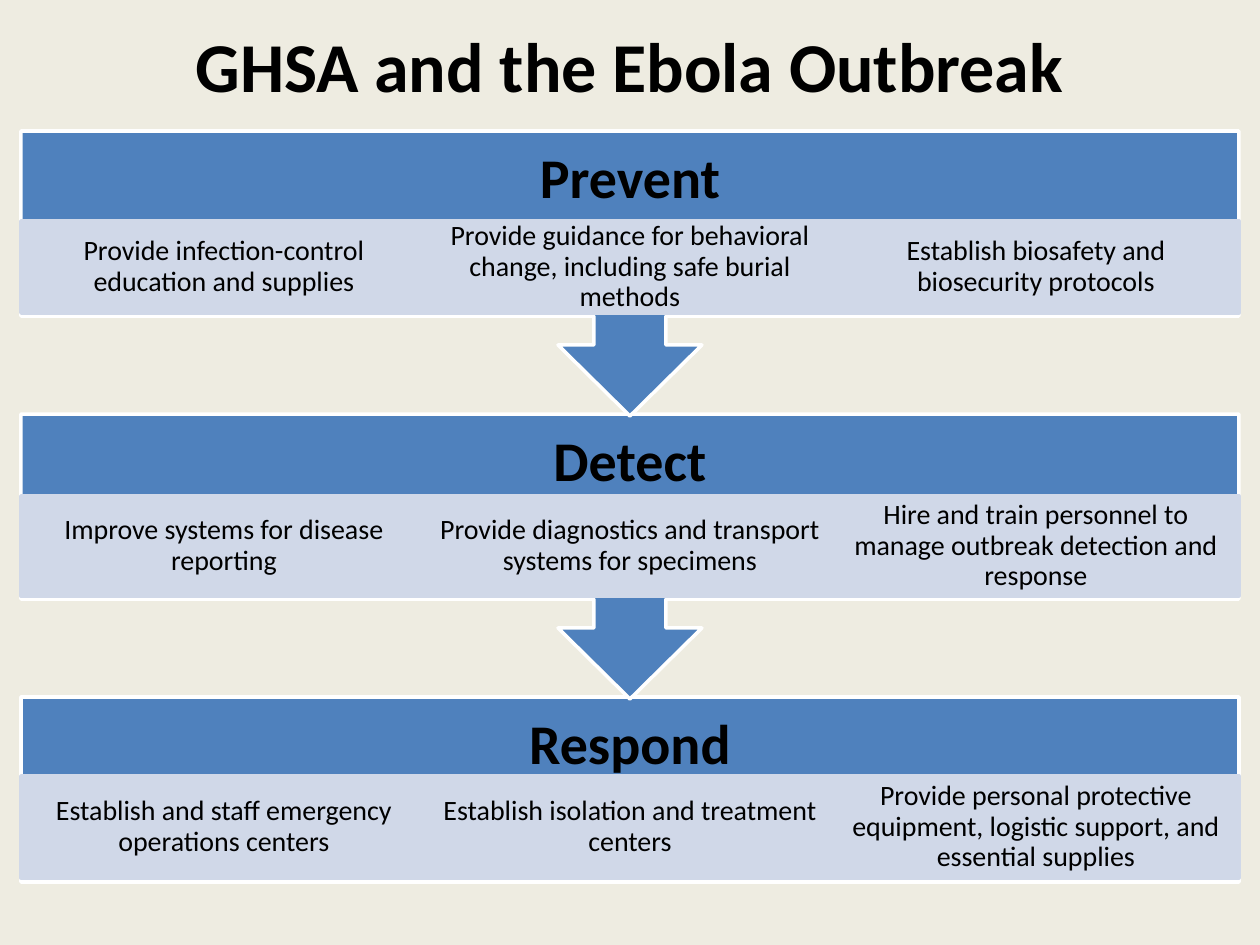
from pptx import Presentation
from pptx.dml.color import RGBColor
from pptx.enum.shapes import MSO_SHAPE
from pptx.enum.text import MSO_ANCHOR, PP_ALIGN
from pptx.util import Pt

RECTANGLE = MSO_SHAPE.RECTANGLE
MIDDLE = MSO_ANCHOR.MIDDLE
CENTER = PP_ALIGN.CENTER

PX = 914400 / 126
COLORS = {
    "background": "EEECE1",
    "stage": "4F81BD",
    "action": "D0D8E8",
    "outline": "FFFFFF",
    "text": "000000",
}

LEFT, WIDTH = 21, 1218
RIGHT = LEFT + WIDTH
MIDDLE_X = LEFT + WIDTH // 2
FIRST_TOP, STAGE_PITCH, STAGE_HEIGHT = 131, 283, 185
NECK_HALF, HEAD_HALF, NECK_LENGTH, ARROW_LENGTH = 36, 72, 29, 100
COLUMN = WIDTH // 3

# name, offset of the action row, height of the action row, actions
STAGES = [
    ("Prevent", 90, 92, [
        "Provide infection-control education and supplies",
        "Provide guidance for behavioral change, including safe burial methods",
        "Establish biosafety and biosecurity protocols"]),
    ("Detect", 82, 100, [
        "Improve systems for disease reporting",
        "Provide diagnostics and transport systems for specimens",
        "Hire and train personnel to manage outbreak detection and response"]),
    ("Respond", 79, 102, [
        "Establish and staff emergency operations centers",
        "Establish isolation and treatment centers",
        "Provide personal protective equipment, logistic support, and essential supplies"]),
]


def px(*lengths):
    return [round(length * PX) for length in lengths]


def write_text(shape, text, size, insets, bold=False):
    """Fill the shape with one paragraph; insets are left, top, right, bottom."""
    frame = shape.text_frame
    frame.word_wrap = True
    frame.vertical_anchor = MIDDLE
    (frame.margin_left, frame.margin_top,
     frame.margin_right, frame.margin_bottom) = px(*insets)
    frame.text = text
    paragraph = frame.paragraphs[0]
    paragraph.alignment = CENTER
    paragraph.line_spacing = 0.9
    paragraph.font.name = "Calibri"
    paragraph.font.size = Pt(size)
    paragraph.font.bold = bold
    paragraph.font.color.rgb = RGBColor.from_string(COLORS["text"])


presentation = Presentation()
presentation.slide_width, presentation.slide_height = px(1260, 945)
slide = presentation.slides.add_slide(presentation.slide_layouts[5])
slide.background.fill.solid()
slide.background.fill.fore_color.rgb = RGBColor.from_string(COLORS["background"])

title = slide.shapes.title
title.left, title.top, title.width, title.height = px(52, 0, 1155, 139)
write_text(title, "GHSA and the Ebola Outbreak", 40, (13, 6, 13, 6), bold=True)

# The lowest stage comes first so that each arrow tip lies over the next stage
for index, (name, row_offset, row_height, actions) in reversed(list(enumerate(STAGES))):
    top = FIRST_TOP + index * STAGE_PITCH
    bottom = top + STAGE_HEIGHT
    outline = [(LEFT, bottom), (LEFT, top), (RIGHT, top)]
    bottom_inset = 110
    if index < len(STAGES) - 1:
        shoulder = bottom + NECK_LENGTH
        outline = [
            (MIDDLE_X + NECK_HALF, bottom),
            (MIDDLE_X + NECK_HALF, shoulder),
            (MIDDLE_X + HEAD_HALF, shoulder),
            (MIDDLE_X, bottom + ARROW_LENGTH),
            (MIDDLE_X - HEAD_HALF, shoulder),
            (MIDDLE_X - NECK_HALF, shoulder),
            (MIDDLE_X - NECK_HALF, bottom),
        ] + outline
        bottom_inset = 210

    builder = slide.shapes.build_freeform(RIGHT, bottom, scale=PX)
    builder.add_line_segments(outline, close=True)
    stage = builder.convert_to_shape()
    stage.shadow.inherit = False
    stage.fill.solid()
    stage.fill.fore_color.rgb = RGBColor.from_string(COLORS["stage"])
    stage.line.color.rgb = RGBColor.from_string(COLORS["outline"])
    stage.line.width = Pt(2)
    write_text(stage, name, 32, (24, 24, 24, bottom_inset), bold=True)

    for column, text in enumerate(actions):
        action = slide.shapes.add_shape(
            RECTANGLE, *px(LEFT + column * COLUMN, top + row_offset, COLUMN, row_height))
        action.shadow.inherit = False
        action.fill.solid()
        action.fill.fore_color.rgb = RGBColor.from_string(COLORS["action"])
        action.line.color.rgb = RGBColor.from_string(COLORS["action"])
        action.line.width = Pt(2)
        write_text(action, text, 16, (13, 3, 13, 3))

presentation.save("out.pptx")
